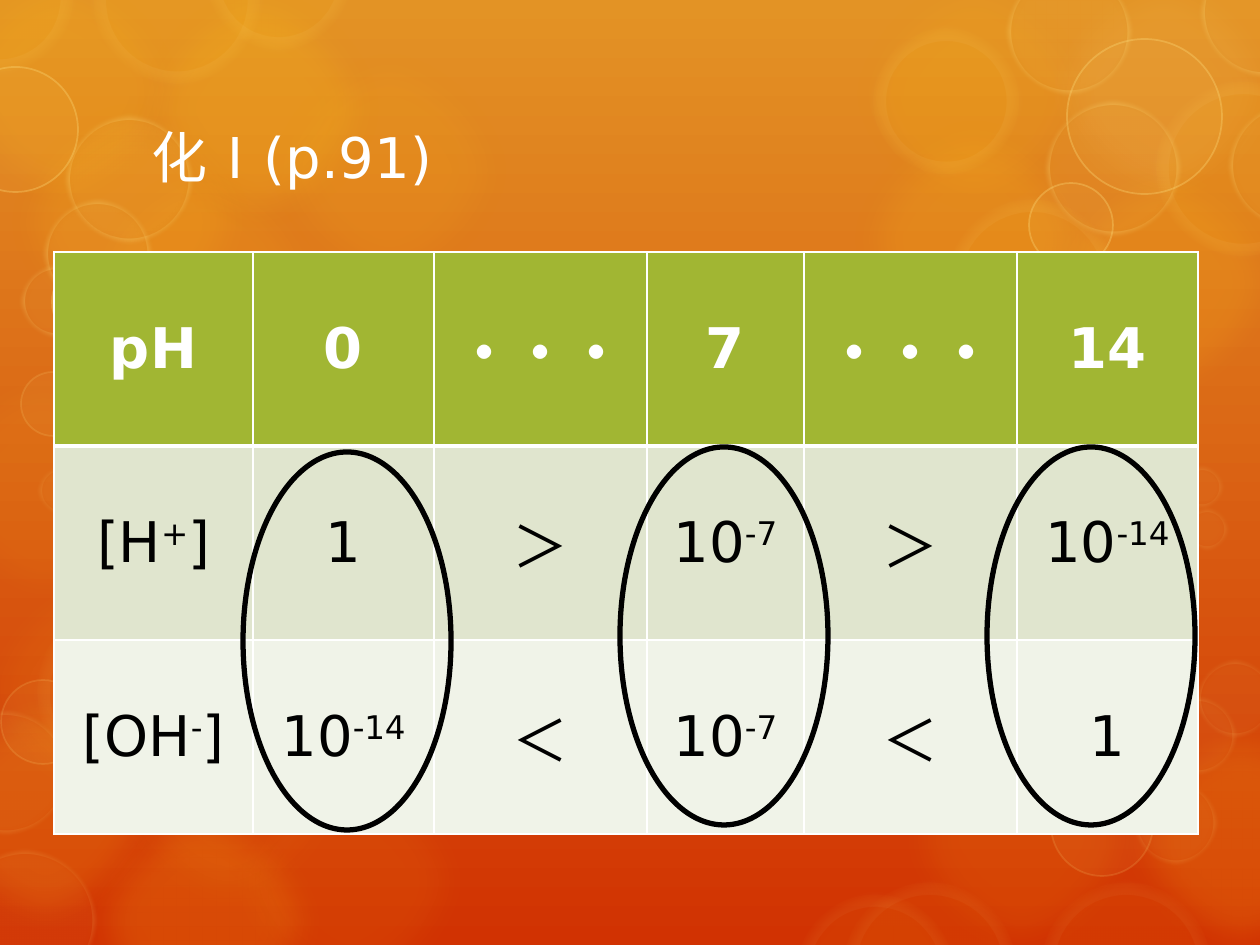
import pptx
import pptx.util
import pptx.oxml
import pptx.oxml.ns
import pptx.dml.color
import pptx.enum.shapes
import pptx.enum.text

FONT = "DejaVu Sans"
TITLE = "化Ⅰ(p.91)"
ROWS = [
    ["pH", "0", "・・・", "7", "・・・", "14"],
    ["[H^+^]", "1", "＞", "10^-7", "＞", "10^-14"],
    ["[OH^-^]", "10^-14", "＜", "10^-7", "＜", "1"],
]
ROW_FILLS = ["A1B633", "E0E5CE", "F0F3E8"]
COL_WIDTHS = [199, 181, 213, 157, 213, 181]
ROW_HEIGHT = 194
TABLE_LEFT, TABLE_TOP = 54, 252
RINGS = [(243, 452), (620, 447), (987, 447)]
RING_SIZE = (208, 378)

GOLD, PALE, CREAM = "FDC61B", "FFE281", "FEEBAE"
BIG = 263
GLOWS = [
    (GOLD, 5, [(919, 601)]),
    (GOLD, 8, [(-32, 557), (97, 660), (218, 751), (-88, 355)]),
    (GOLD, 10, [(72, 151), (843, -37), (890, 708)]),
    (PALE, 10, [(1033, -41)]),
    (GOLD, 10, [(258, 39)]),
    (GOLD, 14, [(-70, -41)]),
    (GOLD, 15, [(0, 91), (1033, 151), (843, 108)]),
    (GOLD, 16, [(72, 790), (1110, 708), (-86, 682)]),
    (GOLD, 20, [(127, -23)]),
]
BUBBLES = [
    (GOLD, 10, CREAM, 14, 6, 12, [
        (1157, 82, 173), (874, 29, 144), (948, 200, 168), (994, 282, 144),
        (1067, 367, 100), (94, -82, 165), (207, -94, 143), (-72, -73, 144)]),
    (GOLD, 6, CREAM, 14, 4, 12, [
        (38, 596, 193), (797, 895, 156), (844, 883, 171), (1042, 883, 168)]),
    (PALE, 5, PALE, 1, 15, 0, [
        (1, 680, 84), (1051, 774, 102), (1033, 679, 102), (21, 372, 64),
        (66, 436, 63)]),
    (PALE, 5, PALE, 1, 30, 0, [
        (-47, 67, 125), (1067, 39, 155), (1029, 183, 84), (52, 260, 84)]),
    (PALE, 5, PALE, 5, 15, 6, [
        (-45, 850, 141), (-55, 711, 123), (961, 722, 102), (1134, 781, 83),
        (1113, 564, 77), (1159, 697, 77), (1197, 660, 77), (1181, 466, 42),
        (1157, 488, 42), (1186, 508, 42), (38, 466, 49)]),
    (PALE, 5, PALE, 5, 30, 6, [
        (66, 116, 126), (44, 200, 107), (21, 265, 72), (1007, -30, 124),
        (1201, -50, 126), (1229, 103, 125), (1046, 101, 134)]),
    (GOLD, 10, None, 0, 0, 12, [(850, 330, 168)]),
]


def px(n):
    return round(n * 914400 / 126)


def rgb(code):
    return pptx.dml.color.RGBColor.from_string(code)


def element(parent, tag, **attrs):
    el = parent.makeelement(pptx.oxml.ns.qn(tag), {k: str(v) for k, v in attrs.items()})
    parent.append(el)
    return el


def paint(fill, color, alpha, owner):
    fill.solid()
    fill.fore_color.rgb = rgb(color)
    if alpha < 100:
        clr = owner.find(pptx.oxml.ns.qn("a:solidFill"))[0]
        element(clr, "a:alpha", val=alpha * 1000)


def ellipse(s, x, y, w, h, fill=None, alpha=100, line=None, width=0, line_alpha=100, soft=0):
    sp = s.shapes.add_shape(pptx.enum.shapes.MSO_SHAPE.OVAL, px(x), px(y), px(w), px(h))
    sp.shadow.inherit = False
    props = sp._element.spPr
    if fill:
        paint(sp.fill, fill, alpha, props)
    else:
        sp.fill.background()
    if line:
        sp.line.width = pptx.util.Pt(width)
        paint(sp.line.fill, line, line_alpha, props.find(pptx.oxml.ns.qn("a:ln")))
    else:
        sp.line.fill.background()
    if soft:
        element(props.find(pptx.oxml.ns.qn("a:effectLst")), "a:softEdge", rad=px(soft))


def write(tf, text, color="000000", size=32, bold=False, align=pptx.enum.text.PP_ALIGN.CENTER):
    p = tf.paragraphs[0]
    p.alignment = align
    for i, part in enumerate(text.split("^")):
        r = p.add_run()
        r.text = part
        r.font.name = FONT
        r.font.size = pptx.util.Pt(size)
        r.font.bold = bold
        r.font.color.rgb = rgb(color)
        if i % 2:
            r.font._element.set("baseline", "30000")


def borders(cell, top, bottom):
    props = cell._tc.get_or_add_tcPr()
    for tag, width in [("a:lnL", 1), ("a:lnR", 1), ("a:lnT", top), ("a:lnB", bottom)]:
        ln = element(props, tag, w=pptx.util.Pt(width))
        element(element(ln, "a:solidFill"), "a:srgbClr", val="FFFFFF")


def main():
    prs = pptx.Presentation()
    prs.slide_width, prs.slide_height = px(1260), px(945)
    s = prs.slides.add_slide(prs.slide_layouts[5])

    bg = s.background.fill
    bg.gradient()
    bg.gradient_angle = 270
    for stop, color, pos in zip(bg.gradient_stops, ["E39325", "D13202"], [0, 1]):
        stop.color.rgb = rgb(color)
        stop.position = pos

    for color, alpha, spots in GLOWS:
        for x, y in spots:
            ellipse(s, x, y, BIG, BIG, color, alpha, soft=32)
    for fill, alpha, line, width, line_alpha, soft, spots in BUBBLES:
        for x, y, d in spots:
            ellipse(s, x, y, d, d, fill, alpha, line, width, line_alpha, soft)

    title = s.shapes.title
    title.left, title.top, title.width, title.height = px(139), px(93), px(982), px(127)
    tf = title.text_frame
    tf.auto_size = pptx.enum.text.MSO_AUTO_SIZE.NONE
    tf.vertical_anchor = pptx.enum.text.MSO_ANCHOR.MIDDLE
    write(tf, TITLE, color="FFFFFF", align=pptx.enum.text.PP_ALIGN.LEFT)
    s.shapes._spTree.append(title._element)

    table = s.shapes.add_table(
        len(ROWS), len(COL_WIDTHS), px(TABLE_LEFT), px(TABLE_TOP),
        px(sum(COL_WIDTHS)), px(ROW_HEIGHT * len(ROWS))).table
    for col, width in zip(table.columns, COL_WIDTHS):
        col.width = px(width)
    for i, texts in enumerate(ROWS):
        table.rows[i].height = px(ROW_HEIGHT)
        head = i == 0
        for j, text in enumerate(texts):
            cell = table.cell(i, j)
            borders(cell, 3 if i == 1 else 1, 3 if head else 1)
            cell.fill.solid()
            cell.fill.fore_color.rgb = rgb(ROW_FILLS[i])
            cell.vertical_anchor = pptx.enum.text.MSO_ANCHOR.MIDDLE
            write(cell.text_frame, text, color="FFFFFF" if head else "000000", bold=head)

    for x, y in RINGS:
        ellipse(s, x, y, *RING_SIZE, line="000000", width=3)

    prs.save("out.pptx")


if __name__ == "__main__":
    main()
